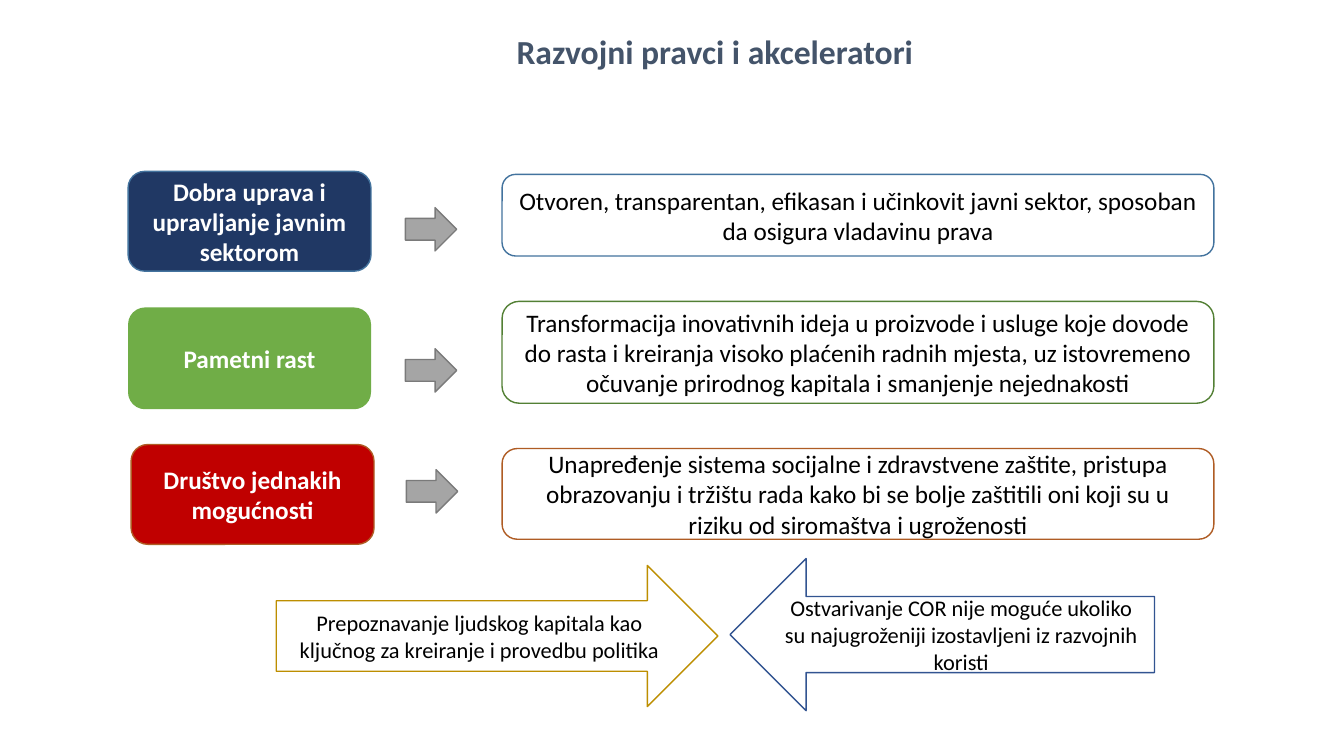
"""Build the slide on development directions and accelerators."""
from dataclasses import dataclass
from typing import Optional

from pptx import Presentation
from pptx import util as u
from pptx.dml import color
from pptx.enum import shapes, text

FONT = "Calibri"
ROUND = shapes.MSO_SHAPE.ROUNDED_RECTANGLE
RIGHT = shapes.MSO_SHAPE.RIGHT_ARROW
LEFT = shapes.MSO_SHAPE.LEFT_ARROW


@dataclass
class Box:
    """A preset shape with its place, colours and text."""
    kind: shapes.MSO_SHAPE
    left: float
    top: float
    width: float
    height: float
    fill: Optional[str] = None
    line: Optional[str] = None
    words: str = ""
    size: int = 18
    ink: str = "000000"
    bold: bool = False


@dataclass
class Direction:
    """A development direction, its arrow and its goal."""
    name: str
    name_left: float
    name_top: float
    name_height: float
    fill: str
    name_line: Optional[str]
    arrow_left: float
    arrow_top: float
    goal: str
    goal_top: float
    goal_height: float
    goal_line: str


DIRECTIONS = [
    Direction("Dobra uprava i upravljanje javnim sektorom",
              1.27, 1.7, 0.99, "203864", "43739E", 4.02, 2.06,
              "Otvoren, transparentan, efikasan i učinkovit javni sektor, "
              "sposoban da osigura vladavinu prava",
              1.73, 0.81, "43739E"),
    Direction("Pametni rast",
              1.27, 3.05, 1.01, "70AD47", None, 4.02, 3.46,
              "Transformacija inovativnih ideja u proizvode i usluge koje "
              "dovode do rasta i kreiranja visoko plaćenih radnih mjesta, uz "
              "istovremeno očuvanje prirodnog kapitala i smanjenje nejednakosti",
              2.99, 1.01, "538035"),
    Direction("Društvo jednakih mogućnosti",
              1.3, 4.41, 0.99, "C00000", "AF5C24", 4.03, 4.66,
              "Unapređenje sistema socijalne i zdravstvene zaštite, pristupa "
              "obrazovanju i tržištu rada kako bi se bolje zaštitili oni koji "
              "su u riziku od siromaštva i ugroženosti",
              4.45, 0.9, "AF5C24"),
]

ACCELERATORS = [
    Box(RIGHT, 2.74, 5.61, 4.38, 1.4, None, "BD8E00",
        "Prepoznavanje ljudskog kapitala kao ključnog za kreiranje i "
        "provedbu politika", 16),
    Box(LEFT, 7.24, 5.54, 4.21, 1.51, "FFFFFF", "325491",
        "Ostvarivanje COR nije moguće ukoliko su najugroženiji izostavljeni "
        "iz razvojnih koristi", 16),
]


def rgb(value: str) -> color.RGBColor:
    """Turn a hex string into a colour."""
    return color.RGBColor.from_string(value)


def write(tf, words: str, size: int, ink: str, bold: bool) -> None:
    """Put one centred run into a text frame."""
    tf.word_wrap = True
    tf.auto_size = text.MSO_AUTO_SIZE.NONE
    tf.vertical_anchor = text.MSO_ANCHOR.MIDDLE
    p = tf.paragraphs[0]
    p.alignment = text.PP_ALIGN.CENTER
    r = p.add_run()
    r.text = words
    r.font.name = FONT
    r.font.size = u.Pt(size)
    r.font.bold = bold
    r.font.color.rgb = rgb(ink)


def draw_box(s, box: Box) -> None:
    """Draw one preset shape on the slide."""
    sp = s.shapes.add_shape(box.kind, u.Inches(box.left), u.Inches(box.top),
                            u.Inches(box.width), u.Inches(box.height))
    sp.shadow.inherit = False
    if box.fill:
        sp.fill.solid()
        sp.fill.fore_color.rgb = rgb(box.fill)
    else:
        sp.fill.background()
    if box.line:
        sp.line.color.rgb = rgb(box.line)
        sp.line.width = u.Pt(1)
    else:
        sp.line.fill.background()
    if box.words:
        write(sp.text_frame, box.words, box.size, box.ink, box.bold)


def draw_direction(s, d: Direction) -> None:
    """Draw a direction, the arrow beside it and its goal."""
    draw_box(s, Box(ROUND, d.name_left, d.name_top, 2.41, d.name_height,
                    d.fill, d.name_line, d.name, ink="FFFFFF", bold=True))
    draw_box(s, Box(ROUND, 4.98, d.goal_top, 7.06, d.goal_height,
                    None, d.goal_line, d.goal))
    draw_box(s, Box(RIGHT, d.arrow_left, d.arrow_top, 0.51, 0.43,
                    "A5A5A5", "7A7A7A"))


def main() -> None:
    """Build and save the presentation."""
    prs = Presentation()
    prs.slide_width, prs.slide_height = u.Inches(13.33), u.Inches(7.5)
    s = prs.slides.add_slide(prs.slide_layouts.get_by_name("Title Only"))
    title = s.shapes.title
    title.left, title.top = u.Inches(1.34), u.Inches(0.17)
    title.width, title.height = u.Inches(11.5), u.Inches(0.67)
    write(title.text_frame, "Razvojni pravci i akceleratori", 24, "44546A", True)
    for direction in DIRECTIONS:
        draw_direction(s, direction)
    for arrow in ACCELERATORS:
        draw_box(s, arrow)
    prs.save("out.pptx")


if __name__ == "__main__":
    main()
